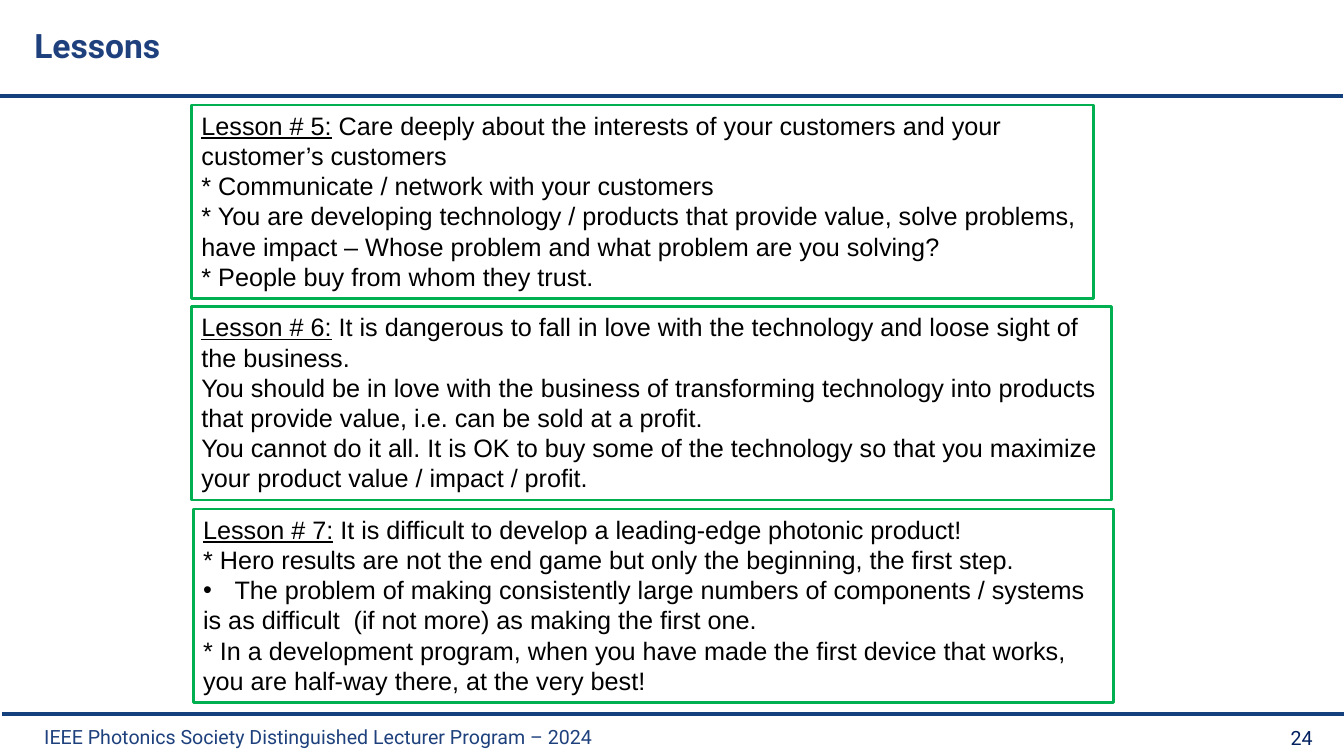
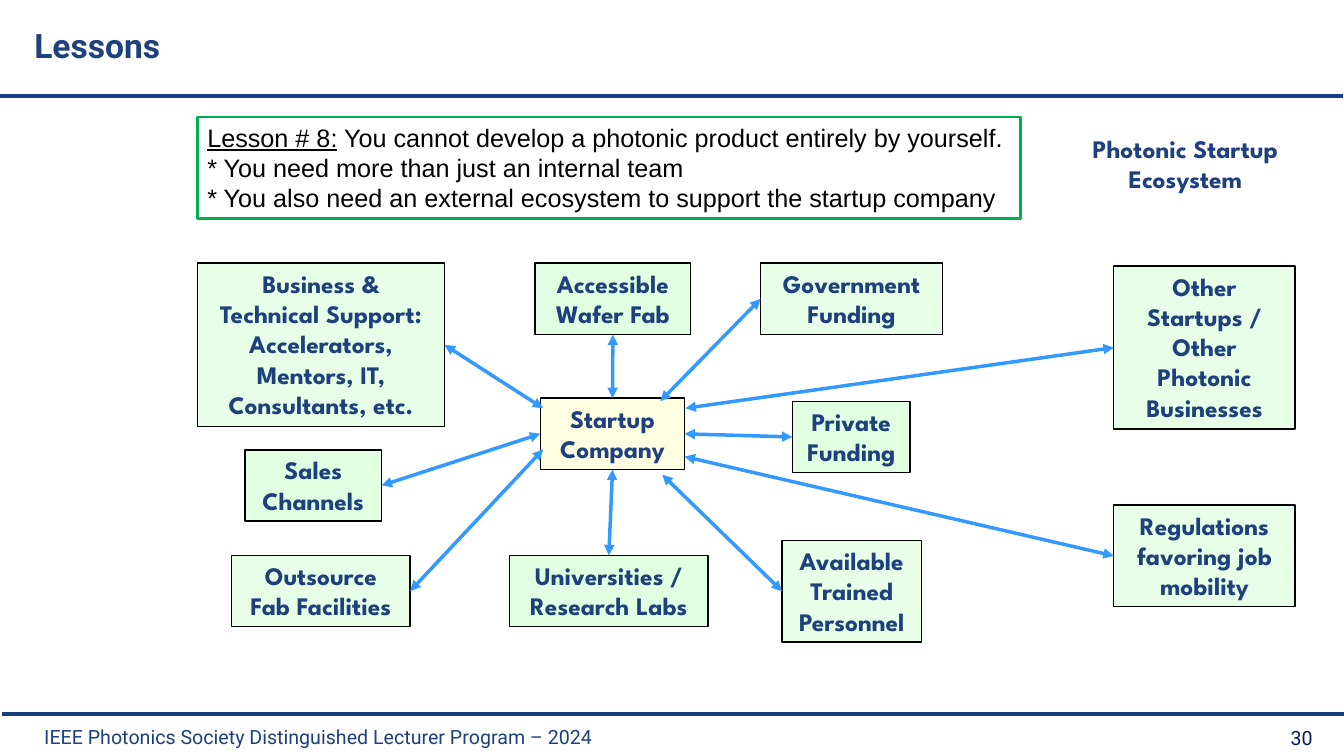
from lxml import etree
from pptx import Presentation
from pptx.dml.color import RGBColor
from pptx.enum import shapes, text
from pptx.oxml import ns
from pptx.util import Pt

THEME = {
    "rule": "14407D", "lesson": "00B050", "outline": "000000", "arrow": "3399FF",
    "company": "FFFFE1", "mint": "E1FFE1", "pale": "E7FFE7",
    "rule_width": 2.5, "lesson_width": 2, "outline_width": 1, "bullet_indent": 22.5,
}
STYLES = {
    "title": {"name": "Roboto", "size": 24, "bold": True, "color": "1E417D"},
    "footer": {"name": "Roboto", "size": 14, "color": "1E417D"},
    "number": {"name": "Roboto", "size": 14, "color": "002060"},
    "lesson": {"name": "Arial", "size": 18, "color": "000000"},
    "node": {"name": "League Spartan", "size": 18, "bold": True, "color": "1E417D"},
}
CENTER, RIGHT = text.PP_ALIGN.CENTER, text.PP_ALIGN.RIGHT
TOP_SIDE, LEFT_SIDE, BOTTOM_SIDE, RIGHT_SIDE = range(4)

TITLE = "Lessons"
FOOTER = "IEEE Photonics Society Distinguished Lecturer Program – 2024"
RULES = [((1.5, 510), (960, 510)), ((0, 68.5), (959, 68.5))]

# Box, wraps by itself, underlined heading, rest of the first line, further lines
CUSTOMERS = ((136.8, 75, 644.4, 138.2), False, "Lesson # 5:",
             " Care deeply about the interests of your customers and your", [
                 "customer’s customers",
                 "* Communicate / network with your customers",
                 "* You are developing technology / products that provide value, solve problems,",
                 "have impact – Whose problem and what problem are you solving?",
                 "* People buy from whom they trust."])
BUSINESS = ((136.8, 219, 657.4, 138.2), True, "Lesson # 6:",
            " It is dangerous to fall in love with the technology and loose sight of", [
                "the business.",
                "You should be in love with the business of transforming technology into products",
                "that provide value, i.e. can be sold at a profit.",
                "You cannot do it all. It is OK to buy some of the technology so that you maximize",
                "your product value / impact / profit."])
PRODUCT = ((138, 363.6, 657.4, 138.2), True, "Lesson # 7:",
           " It is difficult to develop a leading-edge photonic product!", [
               "* Hero results are not the end game but only the beginning, the first step.",
               "• The problem of making consistently large numbers of components / systems",
               "is as difficult  (if not more) as making the first one.",
               "* In a development program, when you have made the first device that works, "
               "you are half-way there, at the very best!"])
ECOSYSTEM = ((141, 83.6, 588.2, 72.8), False, "Lesson # 8:",
             " You cannot develop a photonic product entirely by yourself.", [
                 "* You need more than just an internal team",
                 "* You also need an external ecosystem to support the startup company"])

CAPTION = ((768.2, 91.4, 157, 51), ["Photonic Startup", "Ecosystem"])
COMPANY = ((386, 284.4, 103, 51), "company", False, ["Startup", "Company"])

# Box, fill, wraps by itself, lines, side that the arrow leaves,
# and its end at the company: a side, or a point
PARTNERS = [
    ((382.3, 188, 111, 51), "mint", False, ["Accessible", "Wafer Fab"],
     BOTTOM_SIDE, TOP_SIDE),
    ((543.3, 188, 130, 51), "pale", False, ["Government", "Funding"],
     LEFT_SIDE, (471.6, 286.6)),
    ((566, 286.6, 84.2, 51), "mint", False, ["Private", "Funding"],
     LEFT_SIDE, RIGHT_SIDE),
    ((558.7, 386, 99.4, 72.7), "pale", False, ["Available", "Trained", "Personnel"],
     LEFT_SIDE, (473, 339)),
    ((364, 396.7, 141.8, 51), "mint", False, ["Universities /", "Research Labs"],
     TOP_SIDE, BOTTOM_SIDE),
    ((141, 188, 176.5, 116.6), "pale", False,
     ["Business &", "Technical Support:", "Accelerators,", "Mentors, IT,",
      "Consultants, etc."], RIGHT_SIDE, (388, 291.6)),
    ((165.5, 396.7, 127.5, 51), "pale", False, ["Outsource", "Fab Facilities"],
     RIGHT_SIDE, (388, 321)),
    ((795.6, 190, 129.6, 116.6), "pale", True,
     ["Other Startups /", "Other", "Photonic Businesses"], LEFT_SIDE, (489.6, 291.6)),
    ((175, 321.3, 97.5, 51), "mint", False, ["Sales", "Channels"],
     RIGHT_SIDE, LEFT_SIDE),
    ((795.6, 360.7, 129.6, 72.7), "pale", True, ["Regulations favoring job mobility"],
     LEFT_SIDE, (489, 326.2)),
]


def rgb(key):
    return RGBColor.from_string(THEME.get(key, key))


def style_font(font, style):
    for attribute, value in STYLES[style].items():
        if attribute == "color":
            font.color.rgb = rgb(value)
        else:
            setattr(font, attribute, Pt(value) if attribute == "size" else value)


def set_frame(frame, wrap, **settings):
    settings = {"word_wrap": wrap, "vertical_anchor": text.MSO_ANCHOR.TOP, **settings}
    for attribute, value in settings.items():
        setattr(frame, attribute, value)


def add_bullet(paragraph):
    indent = Pt(THEME["bullet_indent"])
    properties = paragraph._p.get_or_add_pPr()
    properties.set("marL", str(indent))
    properties.set("indent", str(-indent))
    etree.SubElement(properties, ns.qn("a:buFont")).set("typeface", "Arial")
    etree.SubElement(properties, ns.qn("a:buChar")).set("char", "•")


def write_lines(frame, lines, style, align=text.PP_ALIGN.LEFT):
    """Write one paragraph per line; a line may be a tuple (underlined, plain)."""
    for index, line in enumerate(lines):
        paragraph = frame.add_paragraph() if index else frame.paragraphs[0]
        paragraph.alignment = align
        heading, rest = line if isinstance(line, tuple) else ("", line)
        if rest.startswith("• "):
            add_bullet(paragraph)
            rest = rest[2:]
        for part in filter(None, (heading, rest)):
            run = paragraph.add_run()
            run.text = part
            style_font(run.font, style)
            if part is heading:
                run.font.underline = True


def add_label(slide, box, lines, style, wrap=True, align=text.PP_ALIGN.LEFT, **settings):
    label = slide.shapes.add_textbox(*map(Pt, box))
    set_frame(label.text_frame, wrap, **settings)
    write_lines(label.text_frame, lines, style, align)


def add_box(slide, box, lines, style, outline, wrap, fill=None, align=text.PP_ALIGN.LEFT):
    rectangle = slide.shapes.add_shape(shapes.MSO_SHAPE.RECTANGLE, *map(Pt, box))
    rectangle.shadow.inherit = False
    if fill:
        rectangle.fill.solid()
        rectangle.fill.fore_color.rgb = rgb(fill)
    else:
        rectangle.fill.background()
    rectangle.line.color.rgb = rgb(outline)
    rectangle.line.width = Pt(THEME[outline + "_width"])
    set_frame(rectangle.text_frame, wrap, auto_size=text.MSO_AUTO_SIZE.SHAPE_TO_FIT_TEXT)
    write_lines(rectangle.text_frame, lines, style, align)
    return rectangle


def add_line(slide, start, end, color):
    line = slide.shapes.add_connector(
        shapes.MSO_CONNECTOR.STRAIGHT, *map(Pt, (*start, *end)))
    line.line.color.rgb = rgb(color)
    line.line.width = Pt(THEME["rule_width"])
    etree.SubElement(line._element.spPr, ns.qn("a:effectLst"))
    return line


def add_link(slide, partner, side, company, company_end):
    """Join a partner to the company with a double-headed arrow."""
    to_side = isinstance(company_end, int)
    link = add_line(slide, (0, 0), (0, 0) if to_side else company_end, "arrow")
    link.begin_connect(partner, side)
    if to_side:
        link.end_connect(company, company_end)
    outline = link.line._get_or_add_ln()
    for end in ("a:headEnd", "a:tailEnd"):
        etree.SubElement(outline, ns.qn(end)).set("type", "triangle")


def add_lesson(slide, lesson):
    box, wrap, heading, opening, lines = lesson
    add_box(slide, box, [(heading, opening), *lines], "lesson", "lesson", wrap)


def new_slide(deck, number):
    """Add a slide with the shared rules, title, footer and number."""
    slide = deck.slides.add_slide(deck.slide_layouts[6])
    for start, end in RULES:
        add_line(slide, start, end, "rule")
    add_label(slide, (24.5, 514, 418.3, 24.3), [FOOTER], "footer", wrap=False)
    add_label(slide, (24.5, 4.3, 826.6, 55.4), [TITLE], "title", margin_left=0,
              margin_right=0, vertical_anchor=text.MSO_ANCHOR.MIDDLE)
    add_label(slide, (720.7, 514.8, 224, 22.3), [str(number)], "number", align=RIGHT)
    return slide


def build_lessons(deck):
    slide = new_slide(deck, 24)
    for lesson in (CUSTOMERS, BUSINESS, PRODUCT):
        add_lesson(slide, lesson)


def build_ecosystem(deck):
    slide = new_slide(deck, 30)
    add_lesson(slide, ECOSYSTEM)
    add_label(slide, *CAPTION, "node", wrap=False, align=CENTER)

    def add_node(box, fill, wrap, lines):
        return add_box(slide, box, lines, "node", "outline", wrap, fill, CENTER)

    company = add_node(*COMPANY)
    for *node, side, company_end in PARTNERS:
        add_link(slide, add_node(*node), side, company, company_end)


def main():
    deck = Presentation()
    deck.slide_width, deck.slide_height = Pt(960), Pt(540)
    build_lessons(deck)
    build_ecosystem(deck)
    deck.save("out.pptx")


if __name__ == "__main__":
    main()
